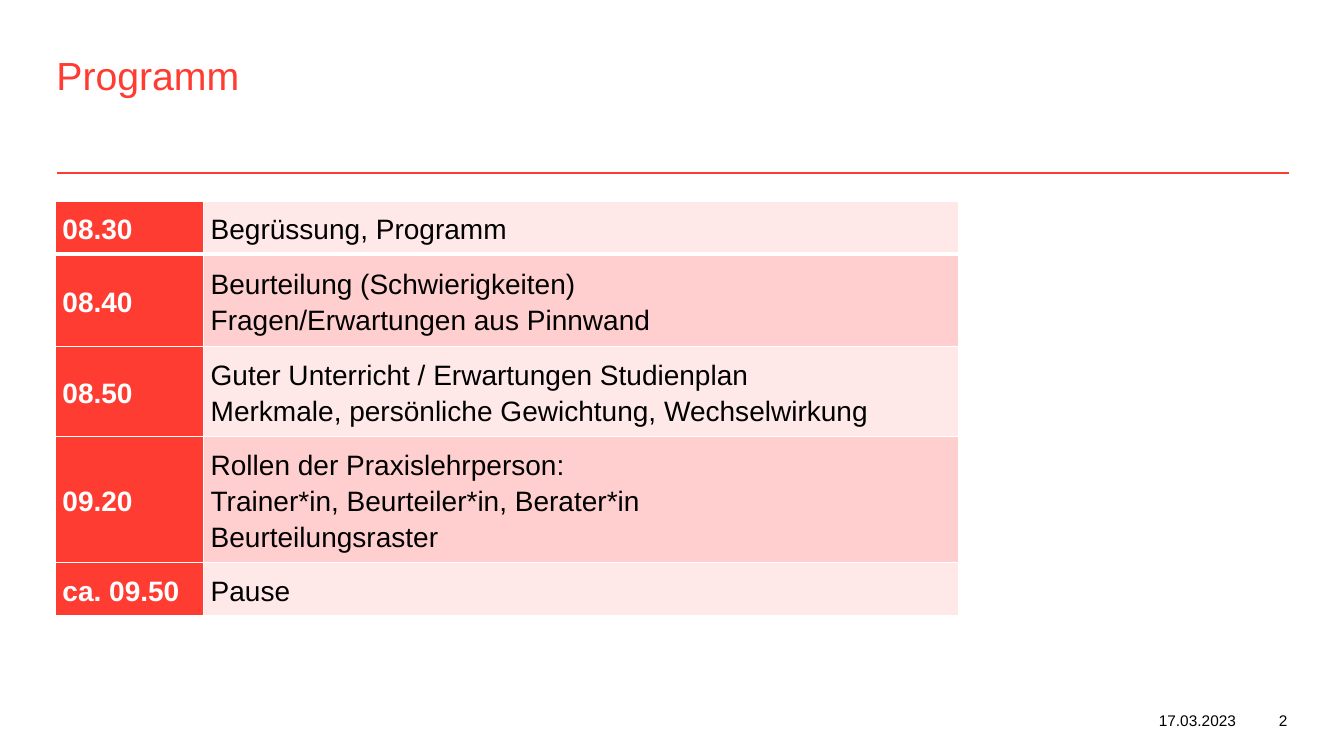
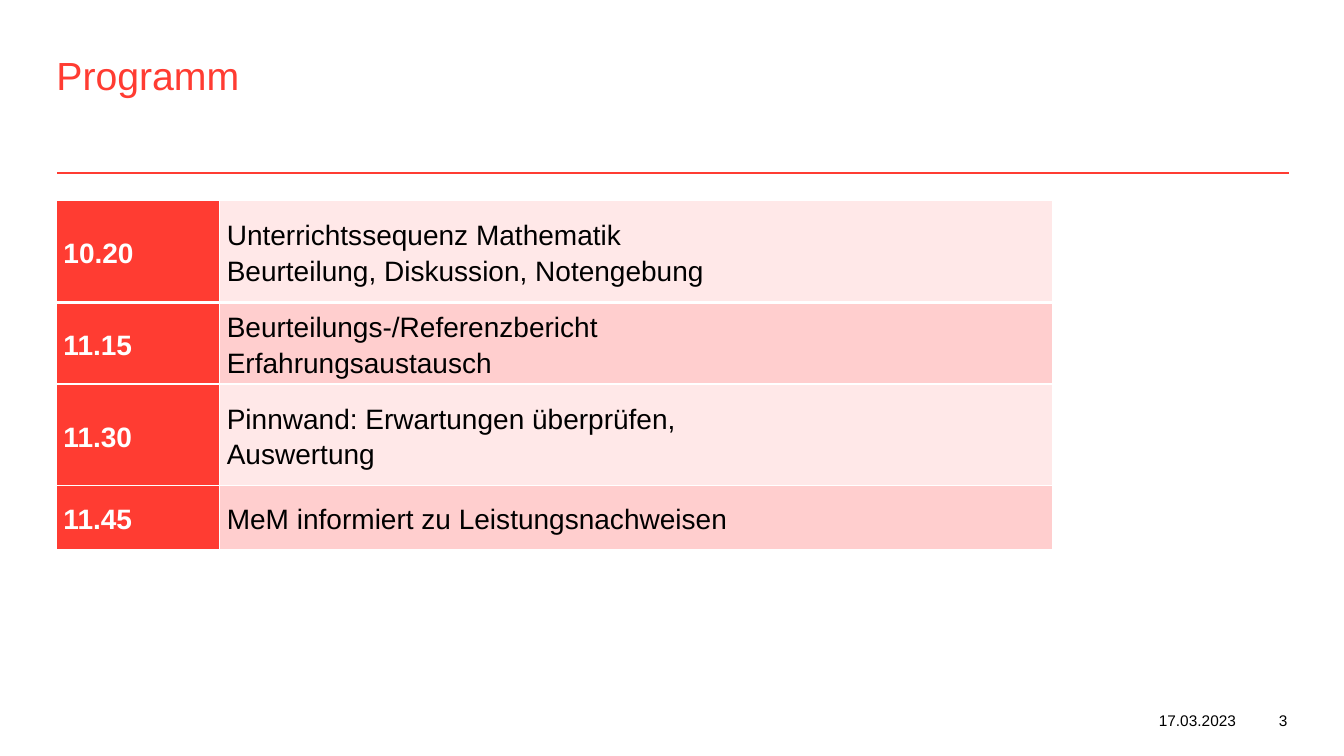
from dataclasses import dataclass

from lxml import etree
from pptx import Presentation
from pptx import util as u
from pptx.dml.color import RGBColor
from pptx.enum import shapes, text
from pptx.oxml import ns


@dataclass(frozen=True)
class Theme:
    font: str = "Arial"
    red: str = "FF3C32"
    bands: tuple = ("FFE8E8", "FFCECE")
    white: str = "FFFFFF"
    black: str = "000000"
    title_size: float = 28
    table_size: float = 20
    footer_size: float = 11
    thin_border: float = 1
    thick_border: float = 3
    rule_width: float = 1.5
    line_spacing: float = 1.15


THEME = Theme()
WIDTH, HEIGHT = 13.33, 7.5
DATE = "17.03.2023"

# Boxes shared by all slides: left, top, width, height in inches
TITLE_BOX = (0.56, 0.51, 12.2, 0.95)
RULE_BOX = (0.57, 1.72, 12.21, 0)
DATE_BOX = (10.84, 7.06, 1.42, 0.16)
NUMBER_BOX = (12.42, 7.06, 0.35, 0.16)

# One entry per slide: table position, column widths, (row height, time, lines)
PROGRAMMES = [
    ((0.55, 2), (1.47, 7.49), [
        (0.52, "08.30", ["Begrüssung, Programm"]),
        (0.92, "08.40", ["Beurteilung (Schwierigkeiten)",
                         "Fragen/Erwartungen aus Pinnwand"]),
        (0.89, "08.50", ["Guter Unterricht / Erwartungen Studienplan",
                         "Merkmale, persönliche Gewichtung, Wechselwirkung"]),
        (1.25, "09.20", ["Rollen der Praxislehrperson:",
                         "Trainer*in, Beurteiler*in, Berater*in",
                         "Beurteilungsraster"]),
        (0.53, "ca. 09.50", ["Pause"]),
    ]),
    ((0.56, 1.99), (1.62, 8.26), [
        (1.01, "10.20", ["Unterrichtssequenz Mathematik",
                         "Beurteilung, Diskussion, Notengebung"]),
        (0.81, "11.15", ["Beurteilungs-/Referenzbericht",
                         "Erfahrungsaustausch"]),
        (1.01, "11.30", ["Pinnwand: Erwartungen überprüfen,",
                         "Auswertung"]),
        (0.63, "11.45", ["MeM informiert zu Leistungsnachweisen"]),
    ]),
]


def inches(box):
    return [u.Inches(value) for value in box]


def style_font(font, size, color, bold=False):
    font.name = THEME.font
    font.size = u.Pt(size)
    font.bold = bold
    font.color.rgb = RGBColor.from_string(color)


def clear_margins(frame):
    frame.margin_left = frame.margin_right = 0
    frame.margin_top = frame.margin_bottom = 0
    frame.word_wrap = True
    frame.vertical_anchor = text.MSO_ANCHOR.TOP


def add_title(slide, box, title):
    shape = slide.shapes.title
    shape.left, shape.top, shape.width, shape.height = inches(box)
    frame = shape.text_frame
    frame.text = title
    clear_margins(frame)
    frame.auto_size = text.MSO_AUTO_SIZE.NONE
    paragraph = frame.paragraphs[0]
    paragraph.alignment = text.PP_ALIGN.LEFT
    style_font(paragraph.runs[0].font, THEME.title_size, THEME.red)


def add_rule(slide, box):
    left, top, width, height = inches(box)
    line = slide.shapes.add_connector(
        shapes.MSO_CONNECTOR.STRAIGHT, left, top, left + width, top + height)
    line.line.color.rgb = RGBColor.from_string(THEME.red)
    line.line.width = u.Pt(THEME.rule_width)
    etree.SubElement(line._element.spPr, ns.qn("a:effectLst"))


def add_footer_text(slide, box, content):
    frame = slide.shapes.add_textbox(*inches(box)).text_frame
    frame.text = content
    clear_margins(frame)
    paragraph = frame.paragraphs[0]
    paragraph.alignment = text.PP_ALIGN.RIGHT
    style_font(paragraph.runs[0].font, THEME.footer_size, THEME.black)
    return paragraph


def make_number_field(paragraph):
    """Turn the run of the paragraph into a live slide number."""
    run = paragraph.runs[0]._r
    run.tag = ns.qn("a:fld")
    run.set("id", "{B6F15528-21DE-4FAA-801E-634DDDAF4B2B}")
    run.set("type", "slidenum")


def set_borders(cell, top, bottom):
    properties = cell._tc.get_or_add_tcPr()
    widths = {"L": THEME.thin_border, "R": THEME.thin_border,
              "T": top, "B": bottom}
    # Borders come before the fill
    for index, (side, width) in enumerate(widths.items()):
        border = etree.Element(ns.qn(f"a:ln{side}"), w=str(u.Pt(width)))
        fill = etree.SubElement(border, ns.qn("a:solidFill"))
        etree.SubElement(fill, ns.qn("a:srgbClr"), val=THEME.white)
        properties.insert(index, border)


def fill_cell(cell, lines, fill, color, bold):
    cell.text_frame.text = "\n".join(lines)
    cell.vertical_anchor = text.MSO_ANCHOR.MIDDLE
    cell.margin_left = cell.margin_right = u.Inches(0.07)
    cell.margin_top = cell.margin_bottom = 0
    cell.fill.solid()
    cell.fill.fore_color.rgb = RGBColor.from_string(fill)
    for paragraph in cell.text_frame.paragraphs:
        paragraph.line_spacing = THEME.line_spacing
        style_font(paragraph.runs[0].font, THEME.table_size, color, bold)


def add_programme_table(slide, position, widths, rows):
    size = (sum(widths), sum(height for height, _, _ in rows))
    table = slide.shapes.add_table(
        len(rows), len(widths), *inches(position + size)).table
    for column, width in zip(table.columns, widths):
        column.width = u.Inches(width)
    for index, (height, time, lines) in enumerate(rows):
        table.rows[index].height = u.Inches(height)
        time_cell, topic_cell = table.rows[index].cells
        fill_cell(time_cell, [time], THEME.red, THEME.white, True)
        fill_cell(topic_cell, lines, THEME.bands[index % 2], THEME.black, False)
        # The first row is set off by a thicker line
        top = THEME.thick_border if index == 1 else THEME.thin_border
        bottom = THEME.thick_border if index == 0 else THEME.thin_border
        for cell in (time_cell, topic_cell):
            set_borders(cell, top, bottom)


def add_programme_slide(presentation, number, position, widths, rows):
    slide = presentation.slides.add_slide(presentation.slide_layouts[5])
    add_rule(slide, RULE_BOX)
    add_title(slide, TITLE_BOX, "Programm")
    add_footer_text(slide, DATE_BOX, DATE)
    make_number_field(add_footer_text(slide, NUMBER_BOX, str(number)))
    add_programme_table(slide, position, widths, rows)


def main():
    presentation = Presentation()
    presentation.slide_width = u.Inches(WIDTH)
    presentation.slide_height = u.Inches(HEIGHT)
    # Numbering starts after the cover
    first_number = 2
    presentation.element.set("firstSlideNum", str(first_number))
    for number, programme in enumerate(PROGRAMMES, first_number):
        add_programme_slide(presentation, number, *programme)
    presentation.save("out.pptx")


if __name__ == "__main__":
    main()
